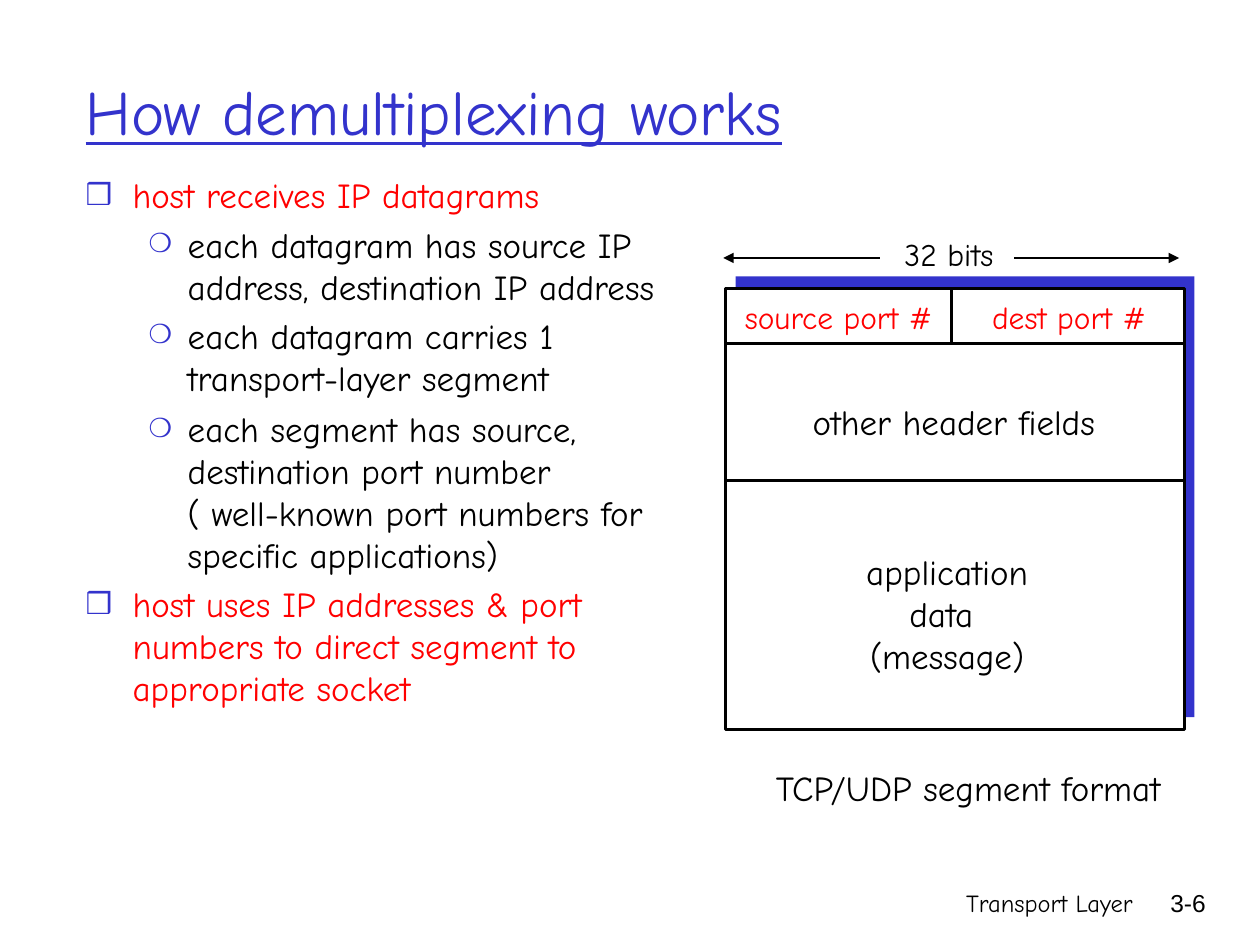
from dataclasses import dataclass

from lxml.etree import SubElement
from pptx import Presentation
from pptx.dml.color import RGBColor
from pptx.enum.shapes import MSO_CONNECTOR as Connector, MSO_SHAPE as ShapeKind
from pptx.enum.text import MSO_ANCHOR as Anchor, MSO_AUTO_SIZE as AutoSize, PP_ALIGN as Align
from pptx.oxml.ns import qn
from pptx.util import Cm, Pt


@dataclass(frozen=True)
class Theme:
    blue: RGBColor = RGBColor(0x33, 0x33, 0xCC)
    red: RGBColor = RGBColor(0xFF, 0, 0)
    black: RGBColor = RGBColor(0, 0, 0)
    white: RGBColor = RGBColor(0xFF, 0xFF, 0xFF)
    font: str = "Comic Neue"
    number_font: str = "Arial"
    title_size: int = 36
    body_size: int = 20
    label_size: int = 18
    footer_size: int = 14
    line_width: float = 1.5


THEME = Theme()


@dataclass(frozen=True)
class Box:
    """A rectangle in centimetres."""
    left: float
    top: float
    width: float
    height: float

    @property
    def right(self) -> float:
        return self.left + self.width

    def lengths(self) -> tuple:
        return Cm(self.left), Cm(self.top), Cm(self.width), Cm(self.height)


@dataclass(frozen=True)
class Label:
    box: Box
    lines: tuple[str, ...]
    size: int = THEME.body_size
    color: RGBColor = THEME.black
    font: str = THEME.font
    align: Align = Align.CENTER
    fitted: bool = True


@dataclass(frozen=True)
class Line:
    start: tuple[float, float]
    end: tuple[float, float]
    arrow: bool = False


@dataclass(frozen=True)
class BulletStyle:
    level: int
    symbol: str
    percent: int
    margin: float
    hanging: float
    color: RGBColor


@dataclass(frozen=True)
class Bullet:
    style: BulletStyle
    lines: tuple[str, ...]


HOST = BulletStyle(0, "❒", 85, 0.95, 0.95, THEME.red)
DETAIL = BulletStyle(1, "❍", 75, 2.06, 0.79, THEME.black)

BULLETS = (
    Bullet(HOST, ("host receives IP datagrams",)),
    Bullet(DETAIL, ("each datagram has source IP address, destination IP address",)),
    Bullet(DETAIL, ("each datagram carries 1 transport-layer segment",)),
    Bullet(DETAIL, ("each segment has source, destination port number ",
                    "( well-known port numbers for specific applications)")),
    Bullet(HOST, ("host uses IP addresses & port numbers to direct segment to appropriate socket",)),
)

TITLE_BOX = Box(1.47, 0.64, 21.59, 3.18)
BODY_BOX = Box(1.47, 3.38, 12.47, 14.1)

# Segment diagram geometry
SEGMENT = Box(14.63, 5.82, 9.25, 8.89)
BACKING = Box(SEGMENT.left + 0.2, SEGMENT.top - 0.25, SEGMENT.width, SEGMENT.height)
PORTS_BOTTOM, HEADER_BOTTOM, PORT_SPLIT = 6.93, 9.68, 19.18
WIDTH_Y = 5.2

LINES = (
    *(Line((SEGMENT.left, y), (SEGMENT.right, y)) for y in (PORTS_BOTTOM, HEADER_BOTTOM)),
    Line((PORT_SPLIT, PORTS_BOTTOM), (PORT_SPLIT, SEGMENT.top)),
    Line((20.45, WIDTH_Y), (23.77, WIDTH_Y), arrow=True),
    Line((17.73, WIDTH_Y), (14.58, WIDTH_Y), arrow=True),
)

LABELS = (
    Label(Box(14.58, 5.89, 4.65, 1.02), ("source port #",), THEME.label_size, THEME.red),
    Label(Box(19.53, 5.89, 4.04, 1.02), ("dest port #",), THEME.label_size, THEME.red),
    Label(Box(17.81, 4.62, 2.64, 1.02), ("32 bits",), THEME.label_size),
    Label(Box(17.09, 10.97, 4.01, 2.79), ("application", "data ", "(message)")),
    Label(Box(15.75, 7.95, 6.96, 1.09), ("other header fields",)),
    Label(Box(15.01, 15.32, 9.02, 1.09), ("TCP/UDP segment format",)),
    Label(Box(15.04, 17.78, 8.05, 1.27), ("Transport Layer",), THEME.footer_size,
          align=Align.RIGHT, fitted=False),
    Label(Box(22.68, 17.78, 1.88, 1.27), ("3-6",), THEME.footer_size,
          font=THEME.number_font, align=Align.RIGHT, fitted=False),
)


def add_run(paragraph, text: str, size: int, color: RGBColor, font: str = THEME.font):
    run = paragraph.add_run()
    run.text = text
    run.font.name = font
    run.font.size = Pt(size)
    run.font.color.rgb = color
    return run


def next_paragraph(frame, index: int):
    return frame.add_paragraph() if index else frame.paragraphs[0]


def place(shape, box: Box) -> None:
    shape.left, shape.top, shape.width, shape.height = box.lengths()


def fill_title(title) -> None:
    place(title, TITLE_BOX)
    frame = title.text_frame
    frame.auto_size = AutoSize.NONE
    frame.vertical_anchor = Anchor.MIDDLE
    paragraph = frame.paragraphs[0]
    paragraph.alignment = Align.LEFT
    run = add_run(paragraph, "How demultiplexing works", THEME.title_size, THEME.blue)
    run.font.underline = True


def set_bullet(paragraph, style: BulletStyle) -> None:
    paragraph.level = style.level
    properties = paragraph._p.get_or_add_pPr()
    properties.set("marL", str(Cm(style.margin)))
    properties.set("indent", str(-Cm(style.hanging)))
    color = SubElement(properties, qn("a:buClr"))
    SubElement(color, qn("a:srgbClr"), val=str(THEME.blue))
    SubElement(properties, qn("a:buSzPct"), val=str(style.percent * 1000))
    SubElement(properties, qn("a:buChar"), char=style.symbol)


def fill_body(body) -> None:
    place(body, BODY_BOX)
    frame = body.text_frame
    frame.auto_size = AutoSize.NONE
    for index, bullet in enumerate(BULLETS):
        paragraph = next_paragraph(frame, index)
        set_bullet(paragraph, bullet.style)
        for line_index, text in enumerate(bullet.lines):
            if line_index:
                paragraph.add_line_break()
            add_run(paragraph, text, THEME.body_size, bullet.style.color)


def add_rectangle(slide, box: Box, fill: RGBColor):
    shape = slide.shapes.add_shape(ShapeKind.RECTANGLE, *box.lengths())
    shape.shadow.inherit = False
    shape.fill.solid()
    shape.fill.fore_color.rgb = fill
    shape.line.fill.background()
    return shape


def add_line(slide, line: Line) -> None:
    points = (Cm(value) for value in (*line.start, *line.end))
    connector = slide.shapes.add_connector(Connector.STRAIGHT, *points)
    connector.line.color.rgb = THEME.black
    connector.line.width = Pt(THEME.line_width)
    if line.arrow:
        SubElement(connector.line._get_or_add_ln(), qn("a:tailEnd"), type="triangle")
    SubElement(connector._element.spPr, qn("a:effectLst"))


def add_label(slide, label: Label) -> None:
    frame = slide.shapes.add_textbox(*label.box.lengths()).text_frame
    frame.word_wrap = not label.fitted
    frame.auto_size = AutoSize.SHAPE_TO_FIT_TEXT if label.fitted else AutoSize.NONE
    for index, text in enumerate(label.lines):
        paragraph = next_paragraph(frame, index)
        paragraph.alignment = label.align
        add_run(paragraph, text, label.size, label.color, label.font)


def main() -> None:
    presentation = Presentation()
    presentation.slide_width, presentation.slide_height = Cm(25.4), Cm(19.05)
    slide = presentation.slides.add_slide(presentation.slide_layouts[1])

    # Title and list
    fill_title(slide.shapes.title)
    fill_body(slide.placeholders[1])

    # Segment diagram
    add_rectangle(slide, BACKING, THEME.blue)
    segment = add_rectangle(slide, SEGMENT, THEME.white)
    segment.line.color.rgb = THEME.black
    segment.line.width = Pt(THEME.line_width)
    for line in LINES:
        add_line(slide, line)

    # Diagram labels, caption and footer
    for label in LABELS:
        add_label(slide, label)

    presentation.save("out.pptx")


if __name__ == "__main__":
    main()
